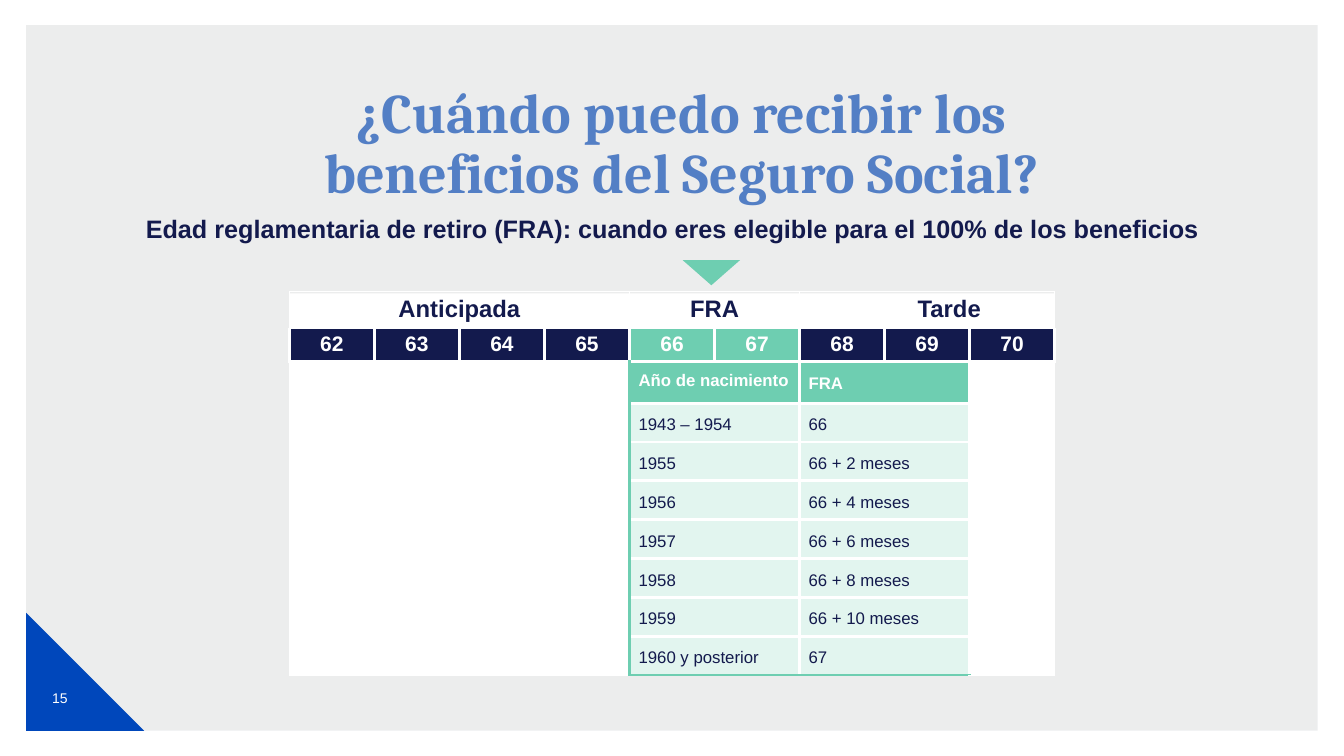
import lxml.etree
import pptx
import pptx.dml.color
import pptx.enum.shapes
import pptx.enum.text
import pptx.oxml.ns
import pptx.util

Inches = pptx.util.Inches
Pt = pptx.util.Pt
SHAPE = pptx.enum.shapes.MSO_SHAPE
ANCHOR = pptx.enum.text.MSO_ANCHOR
ALIGN = pptx.enum.text.PP_ALIGN

NAVY, BLUE, GREEN, MINT = "131A4D", "0047BB", "6ECEB1", "E2F5EF"
WHITE, GRAY = "FFFFFF", "D0D3D4"
TABLE_LEFT, TABLE_WIDTH, TABLE_HEIGHT = 2.87, 7.59, 3.81
HEADER_HEIGHTS = [0.37, 0.33, 0.41]
STAGES = [("Anticipada", 0, 4, 0.09), ("FRA", 4, 2, 0.09), ("Tarde", 6, 3, 0.53)]
AGES = range(62, 71)
RETIREMENT_AGES = [
    ("1943 – 1954", "66"),
    ("1955", "66 + 2 meses"),
    ("1956", "66 + 4 meses"),
    ("1957", "66 + 6 meses"),
    ("1958", "66 + 8 meses"),
    ("1959", "66 + 10 meses"),
    ("1960 y posterior", "67"),
]


def rgb(color):
    return pptx.dml.color.RGBColor.from_string(color)


def write(frame, text, size=12, color=NAVY, bold=True, font="Arial", align=ALIGN.CENTER,
          anchor=ANCHOR.TOP, margins=(0, 0.05, 0, 0.05), spacing=None):
    """Fill a text frame; a newline in the text becomes a line break."""
    frame.word_wrap = True
    frame.vertical_anchor = anchor
    frame.margin_left, frame.margin_top, frame.margin_right, frame.margin_bottom = map(Inches, margins)
    paragraph = frame.paragraphs[0]
    paragraph.alignment = align
    paragraph.line_spacing = spacing
    for index, line in enumerate(text.split("\n")):
        if index:
            paragraph.add_line_break()
        run = paragraph.add_run()
        run.text = line
        run.font.size, run.font.bold, run.font.name = Pt(size), bold, font
        run.font.color.rgb = rgb(color)


def add_text(slide, text, left, top, width, height, **text_format):
    box = slide.shapes.add_textbox(Inches(left), Inches(top), Inches(width), Inches(height))
    write(box.text_frame, text, **text_format)


def add_shape(slide, kind, left, top, width, height, color, opacity=None):
    shape = slide.shapes.add_shape(kind, Inches(left), Inches(top), Inches(width), Inches(height))
    shape.shadow.inherit = False
    shape.fill.solid()
    shape.fill.fore_color.rgb = rgb(color)
    shape.line.fill.background()
    if opacity:
        color_element = shape.fill._xPr.find(".//" + pptx.oxml.ns.qn("a:srgbClr"))
        lxml.etree.SubElement(color_element, pptx.oxml.ns.qn("a:alpha"), val=str(opacity * 1000))
    return shape


def add_line(slide, x1, y1, x2, y2, color, width):
    line = slide.shapes.add_connector(pptx.enum.shapes.MSO_CONNECTOR.STRAIGHT,
                                      Inches(x1), Inches(y1), Inches(x2), Inches(y2))
    line.line.color.rgb = rgb(color)
    line.line.width = Pt(width)
    lxml.etree.SubElement(line._element.spPr, pptx.oxml.ns.qn("a:effectLst"))


def set_borders(cell, **colors):
    """Draw the sides L, R, T, B that are given a colour."""
    properties = cell._tc.get_or_add_tcPr()
    for side in "LRTB":
        if side in colors:
            border = lxml.etree.SubElement(properties, pptx.oxml.ns.qn("a:ln" + side), w=str(Pt(2.25)))
            fill = lxml.etree.SubElement(border, pptx.oxml.ns.qn("a:solidFill"))
            lxml.etree.SubElement(fill, pptx.oxml.ns.qn("a:srgbClr"), val=colors[side])


def style_cell(cell, fill, **borders):
    set_borders(cell, **borders)
    cell.fill.solid()
    cell.fill.fore_color.rgb = rgb(fill)


def write_cell(cell, text, margins=(0.09, 0.04, 0.09, 0.04), anchor=ANCHOR.TOP, **text_format):
    cell.margin_left, cell.margin_top, cell.margin_right, cell.margin_bottom = map(Inches, margins)
    cell.vertical_anchor = anchor
    paragraph = cell.text_frame.paragraphs[0]
    paragraph.alignment = text_format.get("align", ALIGN.CENTER)
    paragraph.line_spacing = text_format.get("spacing")
    run = paragraph.add_run()
    run.text = text
    run.font.name = "Arial"
    run.font.size = Pt(text_format.get("size", 12))
    run.font.bold = text_format.get("bold", True)
    run.font.color.rgb = rgb(text_format.get("color", NAVY))


def merge(table, row, column, rows, columns):
    cell = table.cell(row, column)
    cell.merge(table.cell(row + rows - 1, column + columns - 1))
    return cell


def create_table(slide):
    row_count = len(HEADER_HEIGHTS) + len(RETIREMENT_AGES)
    table = slide.shapes.add_table(row_count, len(AGES), Inches(TABLE_LEFT), Inches(2.89),
                                   Inches(TABLE_WIDTH), Inches(TABLE_HEIGHT)).table
    table.first_row = table.horz_banding = False
    for column in table.columns:
        column.width = Inches(TABLE_WIDTH / len(AGES))
    year_height = (TABLE_HEIGHT - sum(HEADER_HEIGHTS)) / len(RETIREMENT_AGES)
    for row, height in zip(table.rows, HEADER_HEIGHTS + [year_height] * len(RETIREMENT_AGES)):
        row.height = Inches(height)
    for cell in table.iter_cells():
        cell.margin_left = cell.margin_right = cell.margin_top = cell.margin_bottom = 0
    return table


def add_age_table(slide):
    table = create_table(slide)
    for stage, column, columns, left_margin in STAGES:
        cell = merge(table, 0, column, 1, columns)
        cell.fill.background()
        write_cell(cell, stage, (left_margin, 0.04, 0.09, 0.04), size=17)
    for column, age in enumerate(AGES):
        cell = table.cell(1, column)
        style_cell(cell, GREEN if age in (66, 67) else NAVY, L=WHITE, R=WHITE, B=WHITE)
        write_cell(cell, str(age), size=15, color=WHITE)

    style_cell(merge(table, 2, 0, len(RETIREMENT_AGES) + 1, 4), WHITE, T=WHITE, R=GREEN)
    for column, heading, bottom in ((4, "Año de nacimiento", 0.1), (6, "FRA", 0.03)):
        cell = merge(table, 2, column, 1, 2)
        style_cell(cell, GREEN, L=GREEN if column == 4 else WHITE, R=WHITE, T=WHITE)
        write_cell(cell, heading, (0.09, 0.06, 0.09, bottom), ANCHOR.MIDDLE,
                   color=WHITE, align=ALIGN.LEFT)
    for row, values in enumerate(RETIREMENT_AGES, 3):
        bottom = GREEN if values == RETIREMENT_AGES[-1] else WHITE
        for column, value in zip((4, 6), values):
            cell = merge(table, row, column, 1, 2)
            style_cell(cell, MINT, L=GREEN if column == 4 else WHITE, R=WHITE, B=bottom)
            write_cell(cell, value, (0.09, 0.03, 0.09, 0), ANCHOR.MIDDLE,
                       bold=False, align=ALIGN.LEFT, spacing=Pt(14.4))
    for row in range(2, len(table.rows)):
        table.cell(row, 8).fill.background()


def main():
    presentation = pptx.Presentation()
    presentation.slide_width, presentation.slide_height = Inches(13.33), Inches(7.5)
    slide = presentation.slides.add_slide(presentation.slide_layouts[5])
    add_shape(slide, SHAPE.RECTANGLE, 0.26, 0.25, 12.81, 7, GRAY, opacity=40)
    add_shape(slide, SHAPE.RIGHT_TRIANGLE, 0.26, 6.08, 1.17, 1.17, BLUE)
    add_text(slide, "15", 0.32, 6.63, 0.55, 0.58, size=10, color=WHITE, bold=False,
             anchor=ANCHOR.MIDDLE)
    add_shape(slide, SHAPE.RECTANGLE, TABLE_LEFT, 2.91, TABLE_WIDTH, 3.79, WHITE)

    title = slide.shapes.title
    title.left, title.top, title.width, title.height = map(Inches, (1.16, 0.79, 11.2, 1.3))
    write(title.text_frame, "¿Cuándo puedo recibir los\nbeneficios del Seguro Social?",
          size=40, color=BLUE, font="Cambria", anchor=ANCHOR.MIDDLE, spacing=0.9)
    add_age_table(slide)
    add_text(slide, "Edad reglamentaria de retiro (FRA): cuando eres elegible para el 100% de los beneficios",
             0.97, 2.1, 11.4, 0.65, size=18, spacing=0.9)
    add_shape(slide, SHAPE.ISOSCELES_TRIANGLE, 6.77, 2.58, 0.57, 0.25, GREEN).rotation = 180
    add_line(slide, 6.24, 3.66, 6.24, 6.71, GREEN, 2.25)
    presentation.save("out.pptx")


if __name__ == "__main__":
    main()
